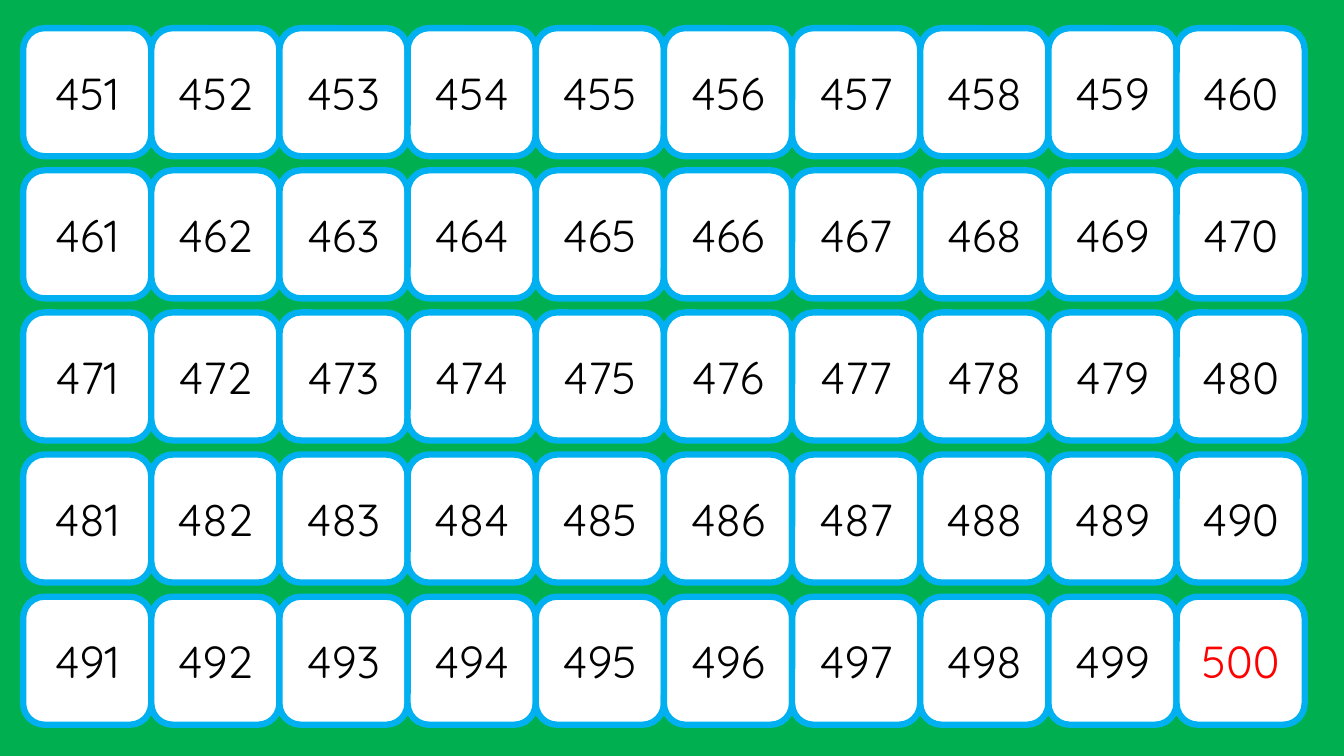
from dataclasses import dataclass

from pptx import Presentation
from pptx import util as u
from pptx.dml import color
from pptx.enum import shapes, text
from pptx.shapes.autoshape import Shape
from pptx.slide import Slide

COLORS = {
    "background": "00B050",
    "card": "FFFFFF",
    "border": "00B0F0",
    "number": "000000",
    "last_number": "FF0000",
}
FONT = "Quicksand"
FIRST_NUMBER, LAST_NUMBER = 451, 500
COLUMNS = 10
FIRST_LEFT, LAST_LEFT = 0.23, 11.67
FIRST_TOP = 0.28
COLUMN_STEP = (LAST_LEFT - FIRST_LEFT) / (COLUMNS - 1)
ROW_STEP = 1.41
CARD_SIZE = 1.27


@dataclass(frozen=True)
class NumberCard:
    number: int
    left: float
    top: float
    number_color: str


def rgb(name: str) -> color.RGBColor:
    return color.RGBColor.from_string(COLORS[name])


def write_text(shape: Shape, content: str, *, size: float, color_name: str) -> None:
    frame = shape.text_frame
    frame.word_wrap = True
    frame.vertical_anchor = text.MSO_ANCHOR.MIDDLE
    paragraph = frame.paragraphs[0]
    paragraph.alignment = text.PP_ALIGN.CENTER
    run = paragraph.add_run()
    run.text = content
    run.font.name = FONT
    run.font.size = u.Pt(size)
    run.font.color.rgb = rgb(color_name)


def make_cards() -> list[NumberCard]:
    cards = []
    for number in range(FIRST_NUMBER, LAST_NUMBER + 1):
        row, column = divmod(number - FIRST_NUMBER, COLUMNS)
        cards.append(NumberCard(
            number=number,
            left=FIRST_LEFT + column * COLUMN_STEP,
            top=FIRST_TOP + row * ROW_STEP,
            number_color="last_number" if number == LAST_NUMBER else "number",
        ))
    return cards


def draw_card(slide: Slide, card: NumberCard) -> None:
    shape = slide.shapes.add_shape(
        shapes.MSO_SHAPE.ROUNDED_RECTANGLE,
        u.Inches(card.left), u.Inches(card.top),
        u.Inches(CARD_SIZE), u.Inches(CARD_SIZE),
    )
    shape.shadow.inherit = False
    shape.fill.solid()
    shape.fill.fore_color.rgb = rgb("card")
    shape.line.color.rgb = rgb("border")
    shape.line.width = u.Pt(4.5)
    write_text(shape, str(card.number), size=32, color_name=card.number_color)


def main() -> None:
    presentation = Presentation()
    presentation.slide_width = u.Inches(13.33)
    presentation.slide_height = u.Inches(7.5)
    slide = presentation.slides.add_slide(presentation.slide_layouts[6])
    slide.background.fill.solid()
    slide.background.fill.fore_color.rgb = rgb("background")
    for card in make_cards():
        draw_card(slide, card)
    presentation.save("out.pptx")


if __name__ == "__main__":
    main()
